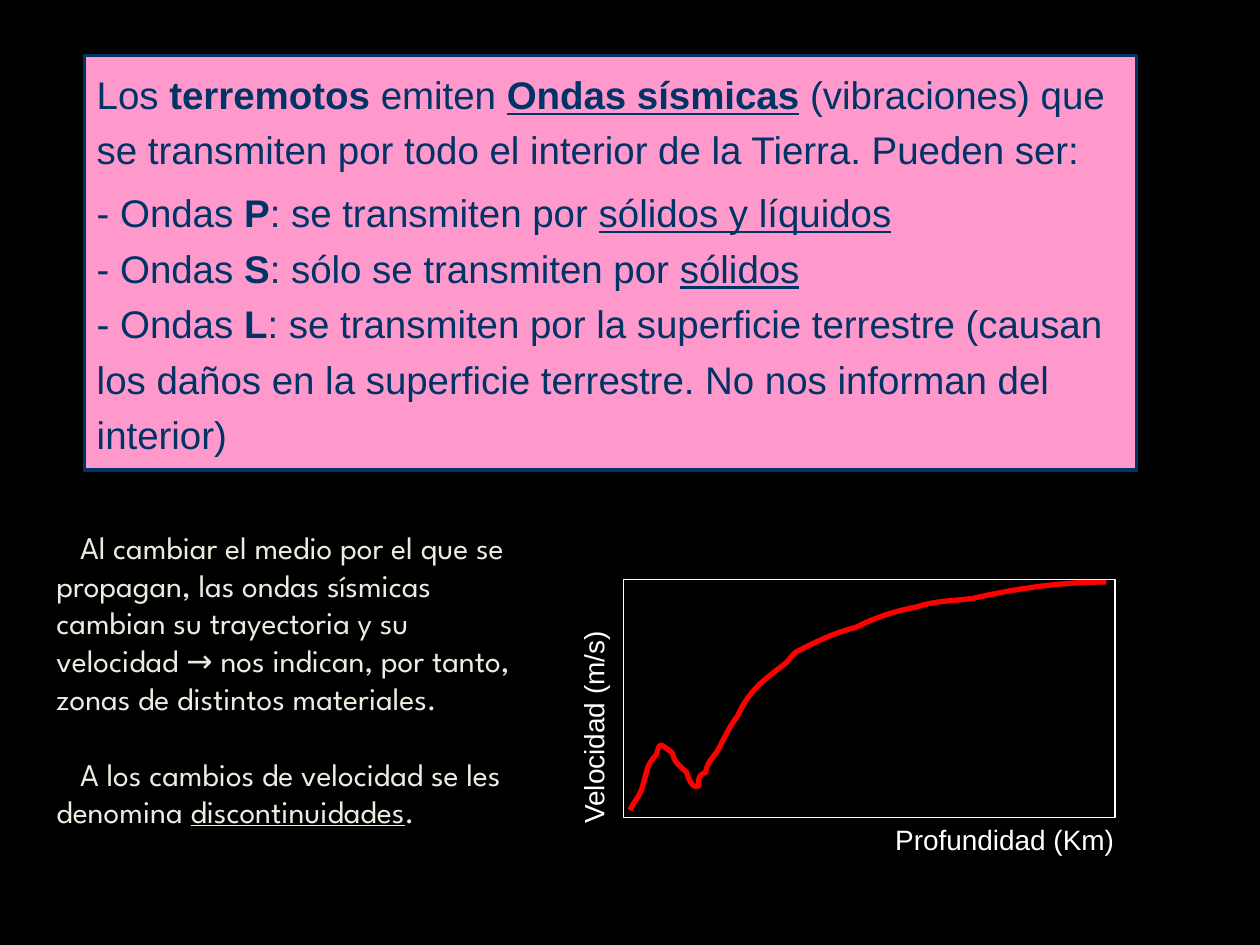
import pptx
import pptx.util
import pptx.dml.color
import pptx.enum.shapes
import pptx.enum.text

Pt = pptx.util.Pt
ALIGN = pptx.enum.text.PP_ALIGN

THEME = {
    "back": "000000", "panel": "FF99CC", "navy": "003366", "curve": "FF0000",
    "axis": "FFFFFF", "note": "EEECE1",
    "sans": "Arial", "display": "League Spartan",
    "panel_size": 22, "label_size": 16, "note_size": 18,
}

WAVES = [
    [("Los ", ""), ("terremotos ", "b"), ("emiten ", ""), ("Ondas sísmicas", "bu"),
     (" (vibraciones) que se transmiten por todo el interior de la Tierra. Pueden ser:", "")],
    [("- Ondas ", ""), ("P", "b"), (": se transmiten por ", ""), ("sólidos y líquidos", "u"),
     ("\n", ""),
     ("- Ondas ", ""), ("S", "b"), (": sólo se transmiten por ", ""), ("sólidos", "u"),
     ("\n", ""),
     ("- Ondas ", ""), ("L", "b"),
     (": se transmiten por la superficie terrestre (causan los daños en la superficie "
      "terrestre. No nos informan del interior)", "")],
]
NOTES = [
    [("Al cambiar el medio por el que se propagan, las ondas sísmicas cambian su trayectoria "
      "y su velocidad → nos indican, por tanto, zonas de distintos materiales.", "")],
    [("A los cambios de velocidad se les denomina ", ""), ("discontinuidades", "u"), (".", "")],
]
SPEED_LABEL = [[("Velocidad (m/s)", "")]]
DEPTH_LABEL = [[("Profundidad (Km)", "")]]

CURVE_START = (360, 463)
CURVE = [
    ((362.2, 457.9), (365.8, 455), (367.2, 449.3)),
    ((370.1, 439.9), (369.4, 437), (375.1, 431.3)),
    ((377.3, 421.9), (378.7, 427), (383.8, 429.8)),
    ((384.5, 431.3), (385.2, 433.4), (385.9, 434.9)),
    ((387.4, 437), (392.4, 441.4), (392.4, 441.4)),
    ((393.1, 444.2), (395.3, 450.7), (398.9, 449.3)),
    ((399.6, 449.3), (398.9, 446.4), (399.6, 444.2)),
    ((400.3, 442.8), (401.8, 442.1), (403.2, 441.4)),
    ((404.6, 434.2), (407.5, 433.4), (410.4, 428.4)),
    ((414, 421.9), (416.9, 414.7), (421.2, 409.7)),
    ((428.4, 393.1), (438.5, 387.4), (449.3, 378.7)),
    ((451.4, 376.6), (453.6, 373), (455.8, 372.2)),
    ((466.6, 366.5), (477.4, 361.4), (488.9, 358.6)),
    ((500.4, 352.8), (511.2, 349.2), (523.4, 347)),
    ((533.5, 343.4), (545, 343.4), (555.8, 342)),
    ((581, 336.2), (606.2, 332.6), (632.2, 332.6)),
]


def rgb(name):
    return pptx.dml.color.RGBColor.from_string(THEME[name])


def style(sp, fill, line, width):
    sp.shadow.inherit = False
    if fill:
        sp.fill.solid()
        sp.fill.fore_color.rgb = rgb(fill)
    else:
        sp.fill.background()
    sp.line.color.rgb = rgb(line)
    sp.line.width = Pt(width)


def add_rect(s, box, fill, line, width):
    sp = s.shapes.add_shape(pptx.enum.shapes.MSO_SHAPE.RECTANGLE, *map(Pt, box))
    style(sp, fill, line, width)
    return sp


def write(sp, paragraphs, font, size, color, align=ALIGN.LEFT, spacing=None, gap=0, indent=0):
    tf = sp.text_frame
    tf.word_wrap = True
    tf.vertical_anchor = pptx.enum.text.MSO_ANCHOR.TOP
    for i, runs in enumerate(paragraphs):
        p = tf.add_paragraph() if i else tf.paragraphs[0]
        p.alignment = align
        if spacing:
            p.line_spacing = spacing
        if i:
            p.space_before = Pt(gap)
        if indent:
            p._p.get_or_add_pPr().set("indent", str(Pt(indent)))
        p.font.size = Pt(THEME[size])
        for text, marks in runs:
            if text == "\n":
                p.add_line_break()
                continue
            r = p.add_run()
            r.text = text
            r.font.name = THEME[font]
            r.font.size = Pt(THEME[size])
            r.font.color.rgb = rgb(color)
            r.font.bold = "b" in marks
            r.font.underline = "u" in marks


def add_text(s, box, *args, **kwargs):
    sp = s.shapes.add_textbox(*map(Pt, box))
    write(sp, *args, **kwargs)
    return sp


def curve_points(start, segments, steps=8):
    for a, b, end in segments:
        for k in range(1, steps + 1):
            t = k / steps
            u = 1 - t
            yield tuple(Pt(u**3 * w + 3 * u * u * t * x + 3 * u * t * t * y + t**3 * z)
                        for w, x, y, z in zip(start, a, b, end))
        start = end


def main():
    prs = pptx.Presentation()
    prs.slide_width, prs.slide_height = Pt(720), Pt(540)
    s = prs.slides.add_slide(prs.slide_layouts[6])
    s.background.fill.solid()
    s.background.fill.fore_color.rgb = rgb("back")

    panel = add_rect(s, (48.2, 31.7, 601.2, 236.9), "panel", "navy", 2)
    write(panel, WAVES, "sans", "panel_size", "navy", spacing=1.2, gap=4.4)

    builder = s.shapes.build_freeform(*map(Pt, CURVE_START))
    builder.add_line_segments(curve_points(CURVE_START, CURVE), close=False)
    style(builder.convert_to_shape(), None, "curve", 3)

    add_rect(s, (356.4, 331.2, 280.8, 136.1), None, "axis", 0.75)
    label = ("sans", "label_size", "axis")
    speed = add_text(s, (254.9, 380.2, 168.5, 26.6), SPEED_LABEL, *label)
    speed.rotation = 270
    add_text(s, (460.1, 466.6, 183.6, 26.6), DEPTH_LABEL, *label, align=ALIGN.RIGHT)
    add_text(s, (25.2, 298.1, 283.7, 225.4), NOTES, "display", "note_size", "note",
             gap=21.6, indent=13.5)
    prs.save("out.pptx")


if __name__ == "__main__":
    main()
